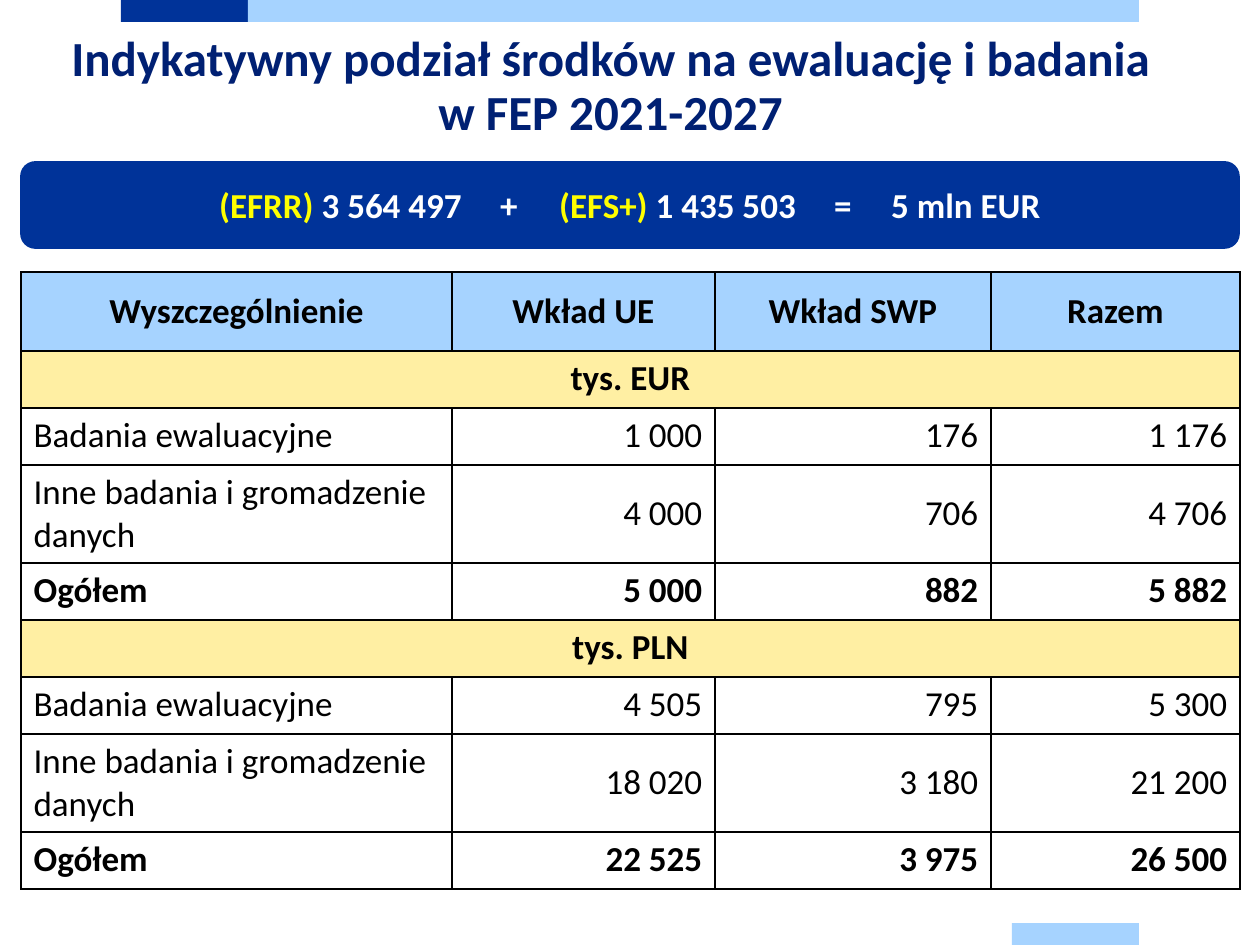
import dataclasses

import lxml.etree
import pptx
import pptx.dml.color
import pptx.enum.shapes
import pptx.enum.text
import pptx.oxml.ns
import pptx.util

SCALE = 914400 / 126  # EMU per px
ALIGN = pptx.enum.text.PP_ALIGN
ANCHOR = pptx.enum.text.MSO_ANCHOR
SHAPE = pptx.enum.shapes.MSO_SHAPE


@dataclasses.dataclass(frozen=True)
class Theme:
    font: str = "Calibri"
    title_size: int = 28
    title_spacing: float = 30.8
    body_size: int = 20
    navy: str = "003399"
    sky: str = "A6D3FF"
    cream: str = "FFEFA3"
    title: str = "002073"
    yellow: str = "FFFF00"
    white: str = "FFFFFF"
    black: str = "000000"


THEME = Theme()

HEADER = ["Wyszczególnienie", "Wkład UE", "Wkład SWP", "Razem"]
SECTIONS = {
    "tys. EUR": [
        ["Badania ewaluacyjne", "1 000", "176", "1 176"],
        ["Inne badania i gromadzenie danych", "4 000", "706", "4 706"],
        ["Ogółem", "5 000", "882", "5 882"],
    ],
    "tys. PLN": [
        ["Badania ewaluacyjne", "4 505", "795", "5 300"],
        ["Inne badania i gromadzenie danych", "18 020", "3 180", "21 200"],
        ["Ogółem", "22 525", "3 975", "26 500"],
    ],
}
COLUMN_WIDTHS = [431, 263, 276, 249]
HEADER_HEIGHT, ROW_HEIGHT, TALL_HEIGHT = 79, 57, 98


def px(length):
    return pptx.util.Emu(round(length * SCALE))


def rgb(value):
    return pptx.dml.color.RGBColor.from_string(value)


def set_attributes(target, values):
    for name, value in values.items():
        setattr(target, name, value)


def add_run(paragraph, text, color, size=THEME.body_size, bold=True):
    run = paragraph.add_run()
    run.text = text
    set_attributes(run.font, {"name": THEME.font, "size": pptx.util.Pt(size), "bold": bold})
    run.font.color.rgb = rgb(color)


def add_block(slide, kind, box, color):
    shape = slide.shapes.add_shape(kind, *map(px, box))
    shape.shadow.inherit = False
    shape.fill.solid()
    shape.fill.fore_color.rgb = rgb(color)
    shape.line.fill.background()
    return shape


def add_title(slide, box, lines):
    frame = slide.shapes.add_textbox(*map(px, box)).text_frame
    set_attributes(frame, {
        "word_wrap": True, "vertical_anchor": ANCHOR.MIDDLE,
        "margin_left": 0, "margin_top": 0, "margin_right": 0, "margin_bottom": 0,
    })
    paragraph = frame.paragraphs[0]
    set_attributes(paragraph, {
        "alignment": ALIGN.CENTER, "line_spacing": pptx.util.Pt(THEME.title_spacing),
    })
    for index, line in enumerate(lines):
        if index:
            paragraph.add_line_break()
        add_run(paragraph, line, THEME.title, THEME.title_size)


def add_tab_stops(paragraph, positions):
    properties = paragraph._p.get_or_add_pPr()
    tab_list = lxml.etree.SubElement(properties, pptx.oxml.ns.qn("a:tabLst"))
    for position in positions:
        lxml.etree.SubElement(tab_list, pptx.oxml.ns.qn("a:tab"), pos=str(px(position)), algn="l")


def add_sum_banner(slide, box, inset, tab_stops, parts):
    shape = add_block(slide, SHAPE.ROUNDED_RECTANGLE, box, THEME.navy)
    shape.line.color.rgb = rgb(THEME.navy)
    shape.line.width = pptx.util.Pt(1)
    set_attributes(shape.text_frame, {
        "word_wrap": True, "vertical_anchor": ANCHOR.MIDDLE, "margin_left": px(inset),
    })
    paragraph = shape.text_frame.paragraphs[0]
    paragraph.alignment = ALIGN.LEFT
    add_tab_stops(paragraph, tab_stops)
    for text, color in parts:
        add_run(paragraph, text, color)


def add_borders(cell):
    properties = cell._tc.get_or_add_tcPr()
    for index, side in enumerate(("a:lnL", "a:lnR", "a:lnT", "a:lnB")):
        line = lxml.etree.Element(pptx.oxml.ns.qn(side), w=str(pptx.util.Pt(1)))
        fill = lxml.etree.SubElement(line, pptx.oxml.ns.qn("a:solidFill"))
        lxml.etree.SubElement(fill, pptx.oxml.ns.qn("a:srgbClr"), val=THEME.black)
        properties.insert(index, line)


def fill_cell(cell, text, alignment, bold, fill=None, anchor=ANCHOR.TOP):
    if fill:
        cell.fill.solid()
        cell.fill.fore_color.rgb = rgb(fill)
    else:
        cell.fill.background()
    add_borders(cell)
    cell.vertical_anchor = anchor
    paragraph = cell.text_frame.paragraphs[0]
    paragraph.alignment = alignment
    if text:
        add_run(paragraph, text, THEME.black, bold=bold)


def add_budget_table(slide, left, top):
    # Header, then per section: a merged heading, two items and a total
    rows = [("header", HEADER)]
    for unit, items in SECTIONS.items():
        rows.append(("unit", [unit, "", "", ""]))
        rows += [("total" if item is items[-1] else "item", item) for item in items]
    heights = [
        HEADER_HEIGHT if kind == "header" else TALL_HEIGHT if len(texts[0]) > 25 else ROW_HEIGHT
        for kind, texts in rows
    ]
    table = slide.shapes.add_table(
        len(rows), len(HEADER), px(left), px(top), px(sum(COLUMN_WIDTHS)), px(sum(heights))
    ).table
    set_attributes(table, {"first_row": False, "horz_banding": False})
    for column, width in zip(table.columns, COLUMN_WIDTHS):
        column.width = px(width)

    fills = {"header": THEME.sky, "unit": THEME.cream}
    for row_index, (kind, texts) in enumerate(rows):
        table.rows[row_index].height = px(heights[row_index])
        for column_index, text in enumerate(texts):
            if kind in fills:
                alignment = ALIGN.CENTER
            else:
                alignment = ALIGN.RIGHT if column_index else ALIGN.LEFT
            middle = kind == "header" or (column_index and heights[row_index] == TALL_HEIGHT)
            fill_cell(
                table.cell(row_index, column_index), text, alignment, kind != "item",
                fills.get(kind), ANCHOR.MIDDLE if middle else ANCHOR.TOP,
            )
        if kind == "unit":
            table.cell(row_index, 0).merge(table.cell(row_index, len(HEADER) - 1))


def main():
    presentation = pptx.Presentation()
    set_attributes(presentation, {"slide_width": px(1260), "slide_height": px(945)})
    slide = presentation.slides.add_slide(presentation.slide_layouts[6])

    # Edge bars
    for box, color in (
        ((121, 0, 127, 22), THEME.navy),
        ((248, 0, 891, 22), THEME.sky),
        ((1012, 923, 127, 22), THEME.sky),
    ):
        add_block(slide, SHAPE.RECTANGLE, box, color)

    # Title, table and sum
    add_title(slide, (21, 34, 1179, 105),
              ["Indykatywny podział środków na ewaluację i badania", "w FEP 2021-2027"])
    add_budget_table(slide, 21, 272)
    add_sum_banner(slide, (21, 162, 1218, 86), 194, (281, 340, 615, 672), [
        ("(EFRR) ", THEME.yellow),
        ("3 564 497\t+\t", THEME.white),
        ("(EFS+) ", THEME.yellow),
        ("1 435 503\t=\t5 mln EUR", THEME.white),
    ])

    presentation.save("out.pptx")


if __name__ == "__main__":
    main()
